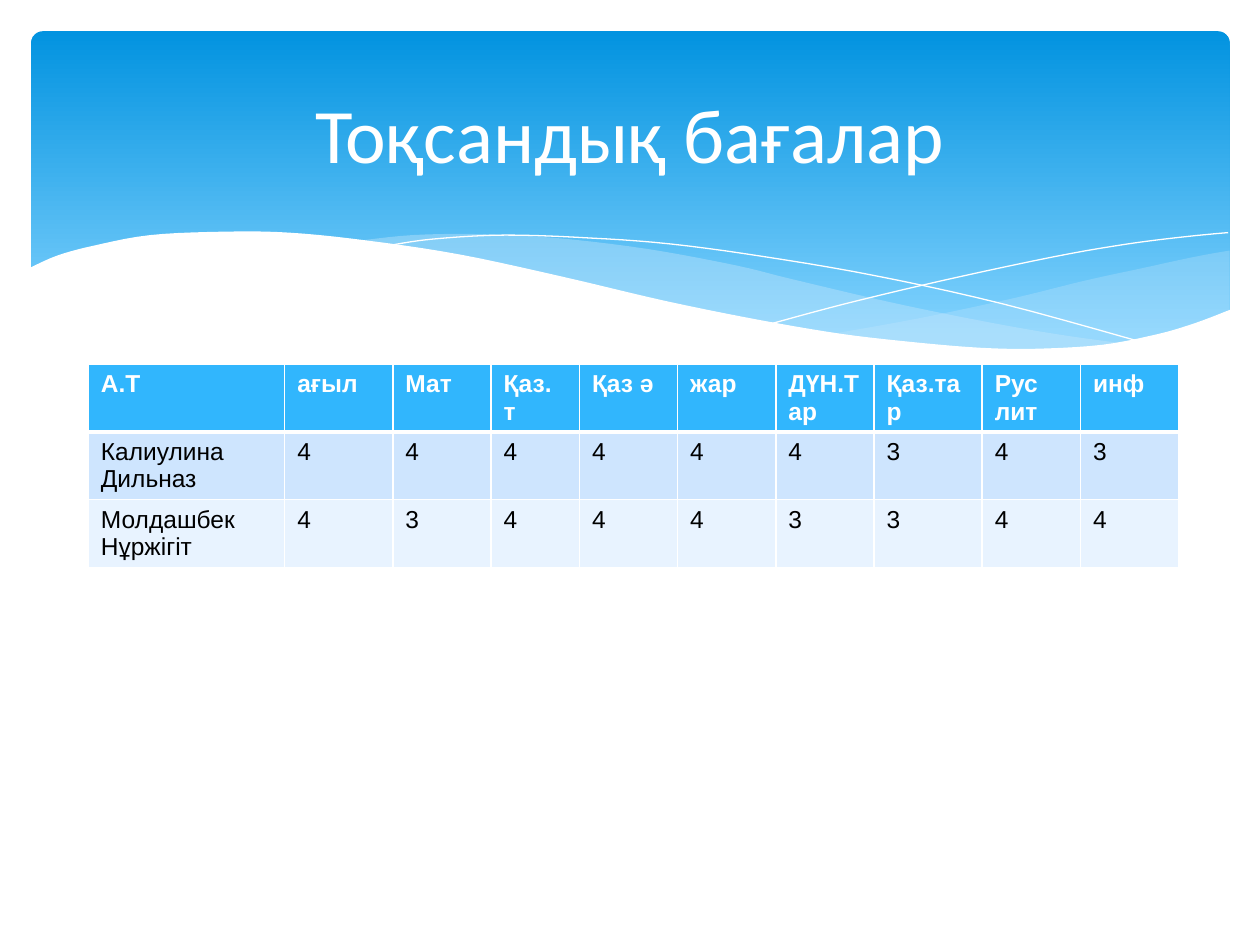
from lxml.etree import SubElement
from pptx import Presentation
from pptx.dml.color import RGBColor
from pptx.enum.shapes import MSO_SHAPE
from pptx.enum.text import MSO_ANCHOR, PP_ALIGN
from pptx.oxml import parse_xml
from pptx.oxml.ns import nsdecls, qn
from pptx.util import Cm, Pt

COLORS = {
    "white": "FFFFFF", "black": "000000",
    "sky": "0293E0", "pale": "83D3FE", "veil": "C6E7FC",
    "head": "31B6FD", "odd": "CEE5FE", "even": "E8F3FF",
}

# Curves in cm, measured from the banner's top left corner
EDGE = [(-0.05, 4.78), (0.53, 4.52), (1.27, 4.32), (2.39, 4.11), (3.86, 4.04),
        (5.21, 4.06), (6.78, 4.22), (8.64, 4.5), (10.72, 4.95), (12.8, 5.44),
        (14.68, 5.82), (16.33, 6.1), (17.81, 6.27), (19.13, 6.38), (20.27, 6.4),
        (21.59, 6.32), (22.73, 6.1), (23.5, 5.87), (24.18, 5.61)]
BASE = [(24.18, 7.72), (-0.05, 7.72)]
RIGHT_TOP = [(16.15, 6.1), (17.88, 5.79), (19.81, 5.38), (21.23, 5.03),
             (22.38, 4.78), (23.44, 4.55), (24.16, 4.42)]
RIGHT_LOW = [(24.16, 5.64), (23.47, 5.89), (22.76, 6.1), (21.95, 6.27),
             (20.8, 6.4), (19.76, 6.43), (18.59, 6.38), (17.27, 6.25), (16.15, 6.1)]
LEFT_TOP = [(6.63, 4.22), (7.7, 4.11), (9.02, 4.09), (10.59, 4.17), (12.42, 4.39),
            (14.2, 4.72), (15.34, 5), (17.3, 5.46), (19.05, 5.82), (20.62, 6.1),
            (22.05, 6.3)]
LEFT_LOW = [(22.05, 6.3), (21.13, 6.4), (19.86, 6.43), (18.36, 6.38), (16.64, 6.17),
            (14.63, 5.84), (12.83, 5.46), (10.77, 5), (9.09, 4.62), (7.57, 4.34),
            (6.63, 4.22)]
FALL = [(7.21, 4.32), (8.1, 4.19), (9.55, 4.11), (11.28, 4.17), (12.9, 4.29),
        (14.81, 4.55), (17.02, 4.93), (19.56, 5.49), (22.4, 6.27)]
RISE = [(14.94, 5.89), (16.43, 5.49), (18.36, 5.03), (20.6, 4.55), (22.1, 4.29),
        (23.29, 4.14), (24.13, 4.06)]

WIDTHS = [3.96, 2.18, 1.98, 1.78, 1.98, 1.98, 1.98, 2.18, 1.98, 1.98]
GRADES = [
    ["А.Т", "ағыл", "Мат", "Қаз. т", "Қаз ә", "жар", "ДҮН.Тар", "Қаз.тар",
     "Рус лит", "инф"],
    ["Калиулина Дильназ", *"444444343"],
    ["Молдашбек Нұржігіт", *"434443344"],
]


def color(name):
    return RGBColor.from_string(COLORS[name])


def smooth(knots, steps=5):
    """Return points on a Catmull-Rom curve through the knots."""
    ends = [knots[0], *knots, knots[-1]]
    points = [knots[0]]
    for a, b, c, d in zip(ends, ends[1:], ends[2:], ends[3:]):
        for step in range(1, steps + 1):
            t = step / steps
            points.append(tuple(
                (2 * q + (r - p) * t + (2 * p - 5 * q + 4 * r - s) * t ** 2
                 + (3 * q - p - 3 * r + s) * t ** 3) / 2
                for p, q, r, s in zip(a, b, c, d)))
    return points


def outline(slide, left, top, points, closed):
    spots = [(Cm(left + x), Cm(top + y)) for x, y in points]
    pen = slide.shapes.build_freeform(*spots[0])
    pen.add_line_segments(spots[1:], close=closed)
    shape = pen.convert_to_shape()
    shape.shadow.inherit = False
    return shape


def add_area(slide, left, top, points, name, alpha=None):
    shape = outline(slide, left, top, points, True)
    shape.fill.solid()
    shape.fill.fore_color.rgb = color(name)
    shape.line.fill.background()
    if alpha:
        tint = shape.fill._xPr.find(qn("a:solidFill"))[0]
        SubElement(tint, qn("a:alpha"), val=str(alpha * 1000))


def add_banner(slide, left, top, width, height):
    # Gradient panel
    panel = slide.shapes.add_shape(MSO_SHAPE.ROUNDED_RECTANGLE, Cm(left), Cm(top),
                                   Cm(width), Cm(height))
    panel.adjustments[0] = 0.034
    panel.shadow.inherit = False
    panel.line.fill.background()
    panel.fill.gradient()
    panel.fill.gradient_angle = 270
    for stop, spot, name in zip(panel.fill.gradient_stops, (0, 0.9), ("sky", "pale")):
        stop.position = spot
        stop.color.rgb = color(name)

    # Translucent waves
    add_area(slide, left, top, smooth(RIGHT_TOP) + smooth(RIGHT_LOW), "veil", 29)
    add_area(slide, left, top, smooth(LEFT_TOP) + smooth(LEFT_LOW), "veil", 40)

    # Hairlines
    for knots in (FALL, RISE):
        line = outline(slide, left, top, smooth(knots), False)
        line.fill.background()
        line.line.color.rgb = color("white")
        line.line.width = Pt(0)

    # White lower edge
    add_area(slide, left, top, smooth(EDGE) + BASE, "white")


def add_borders(cell, above, below):
    props = cell._tc.get_or_add_tcPr()
    for spot, (side, size) in enumerate(zip("LRTB", (1, 1, above, below))):
        props.insert(spot, parse_xml(
            f'<a:ln{side} {nsdecls("a")} w="{Pt(size)}"><a:solidFill>'
            f'<a:srgbClr val="{COLORS["white"]}"/></a:solidFill></a:ln{side}>'))


def add_grades(slide, left, top, width, height):
    table = slide.shapes.add_table(len(GRADES), len(WIDTHS), Cm(left), Cm(top),
                                   Cm(width), Cm(height)).table
    for column, size in zip(table.columns, WIDTHS):
        column.width = Cm(size)
    for r, row in enumerate(GRADES):
        for c, text in enumerate(row):
            cell = table.cell(r, c)
            cell.text = text
            cell.fill.solid()
            cell.fill.fore_color.rgb = color(("head", "odd", "even")[r])
            add_borders(cell, 3 if r == 1 else 1, 3 if r == 0 else 1)
            font = cell.text_frame.paragraphs[0].font
            font.name, font.size, font.bold = "Arial", Pt(14), r == 0
            font.color.rgb = color("black" if r else "white")


def add_title(slide, left, top, width, height):
    frame = slide.shapes.add_textbox(Cm(left), Cm(top), Cm(width),
                                     Cm(height)).text_frame
    frame.word_wrap = True
    frame.vertical_anchor = MSO_ANCHOR.MIDDLE
    para = frame.paragraphs[0]
    para.text = "Тоқсандық бағалар"
    para.alignment = PP_ALIGN.CENTER
    para.font.name, para.font.size = "Calibri", Pt(44)
    para.font.color.rgb = color("white")


def main():
    deck = Presentation()
    deck.slide_width, deck.slide_height = Cm(25.4), Cm(19.05)
    slide = deck.slides.add_slide(deck.slide_layouts[6])
    add_banner(slide, 0.63, 0.63, 24.16, 6.86)
    add_grades(slide, 1.78, 7.34, sum(WIDTHS), 3.12)
    add_title(slide, 1.27, 0.94, 22.86, 3.48)
    deck.save("out.pptx")


if __name__ == "__main__":
    main()
